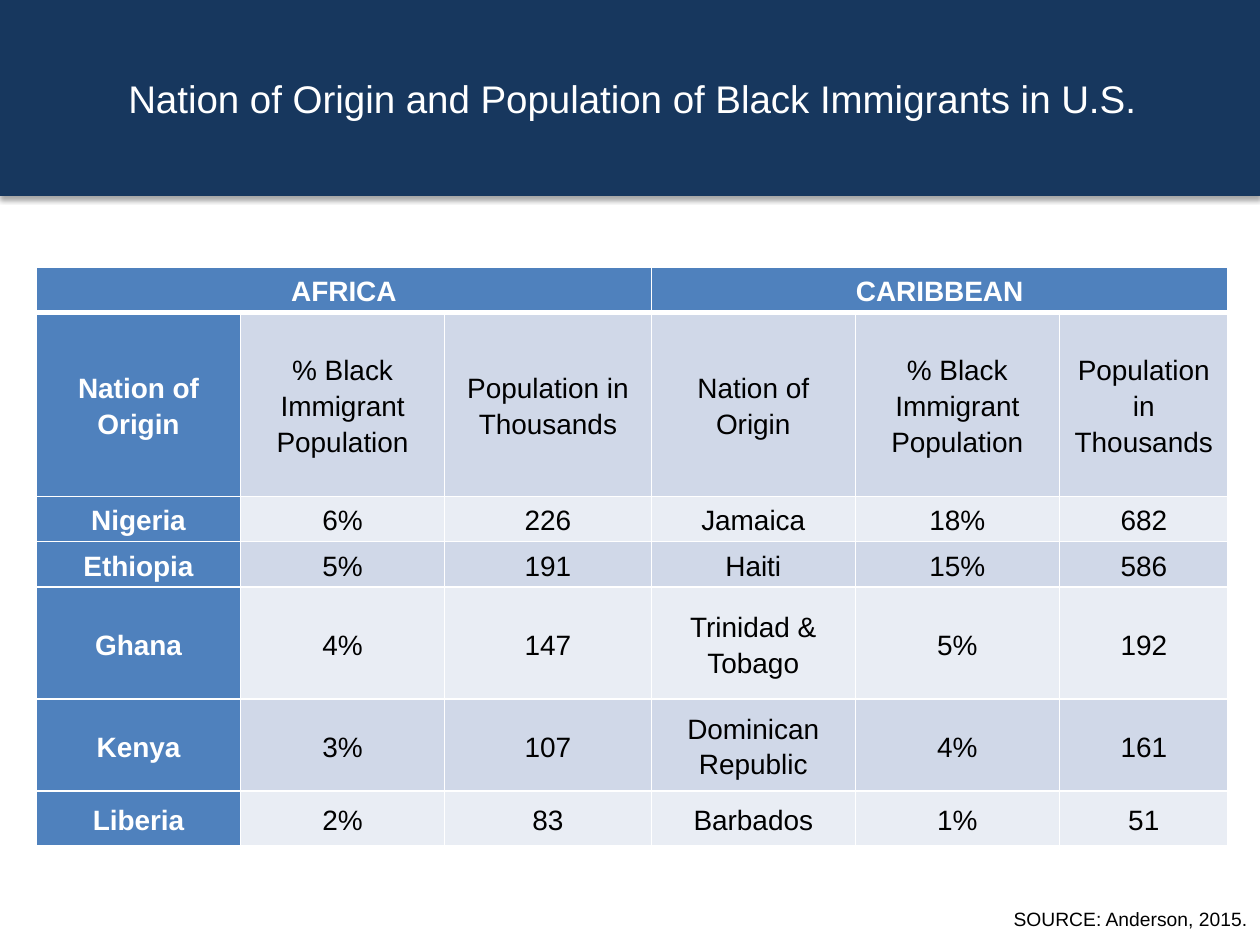
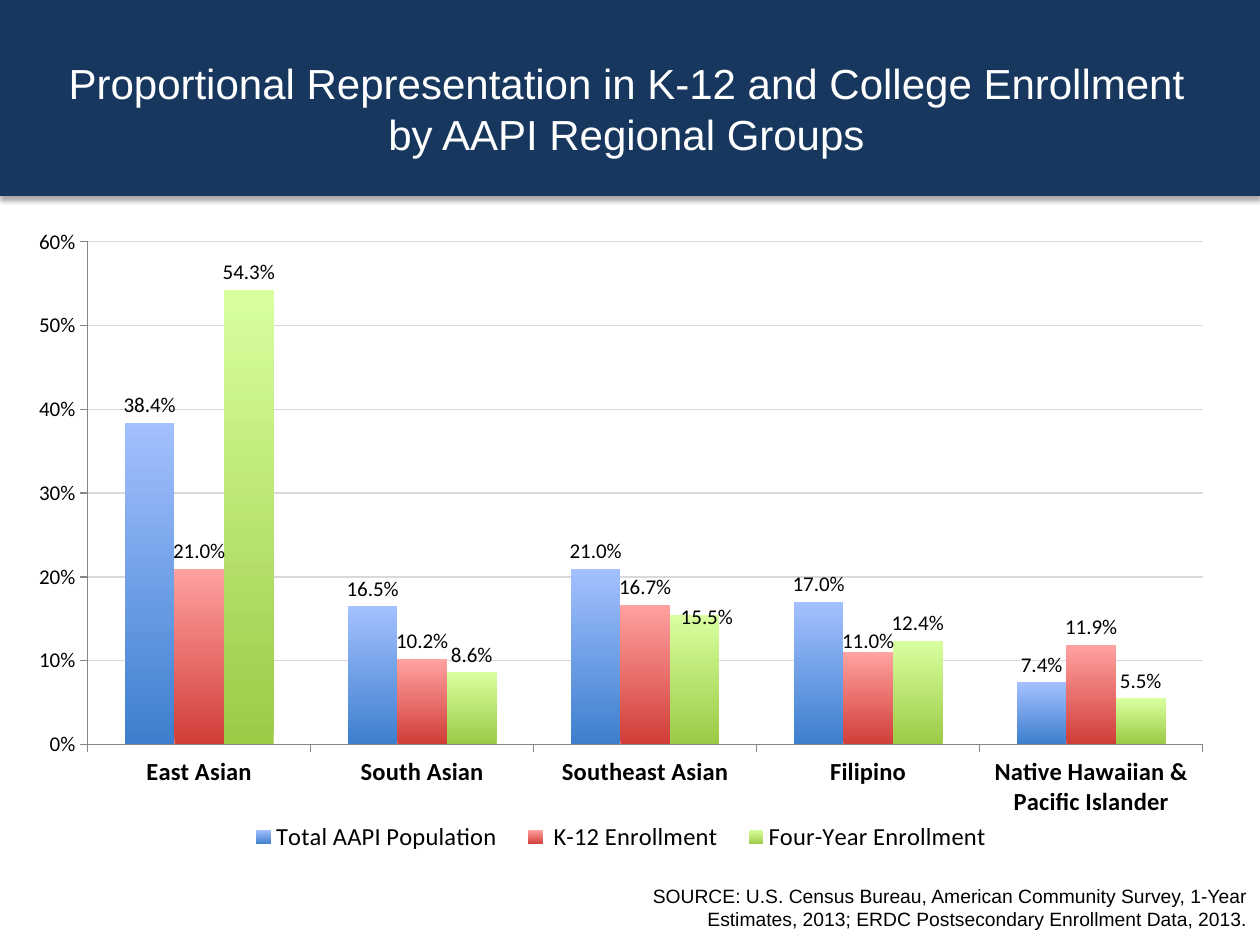
from lxml.etree import SubElement
from pptx import Presentation
from pptx.chart.data import CategoryChartData
from pptx.dml.color import RGBColor
from pptx.enum.chart import XL_CHART_TYPE, XL_LABEL_POSITION, XL_LEGEND_POSITION, XL_TICK_MARK
from pptx.enum.shapes import MSO_SHAPE
from pptx.enum.text import MSO_ANCHOR, PP_ALIGN
from pptx.oxml import parse_xml
from pptx.oxml.ns import nsdecls, qn
from pptx.util import Pt

NAVY = RGBColor(0x17, 0x37, 0x5E)
BLUE = RGBColor(0x4F, 0x81, 0xBD)
BAND_DARK = RGBColor(0xD0, 0xD8, 0xE8)
BAND_LIGHT = RGBColor(0xE9, 0xED, 0xF4)
WHITE = RGBColor(0xFF, 0xFF, 0xFF)
BLACK = RGBColor(0, 0, 0)
GRID_GREY = RGBColor(0xD9, 0xD9, 0xD9)
AXIS_GREY = RGBColor(0x86, 0x86, 0x86)
BAR_GRADIENTS = [
    (RGBColor(0x3D, 0x7F, 0xCD), RGBColor(0xA3, 0xC0, 0xFF)),
    (RGBColor(0xD1, 0x3D, 0x38), RGBColor(0xFF, 0xA2, 0xA0)),
    (RGBColor(0x9C, 0xCA, 0x45), RGBColor(0xD9, 0xFF, 0x9F)),
]

COLUMN_WIDTHS = [116.6, 116.6, 118.1, 116.6, 116.6, 96.5]
ROW_HEIGHTS = [26, 105, 26, 26, 64, 52.5, 31]
REGION_HEADINGS = ["Nation of Origin", "% Black Immigrant Population", "Population in Thousands"]
NATIONS = [
    ["AFRICA", "", "", "CARIBBEAN", "", ""],
    REGION_HEADINGS * 2,
    ["Nigeria", "6%", "226", "Jamaica", "18%", "682"],
    ["Ethiopia", "5%", "191", "Haiti", "15%", "586"],
    ["Ghana", "4%", "147", "Trinidad & Tobago", "5%", "192"],
    ["Kenya", "3%", "107", "Dominican Republic", "4%", "161"],
    ["Liberia", "2%", "83", "Barbados", "1%", "51"],
]

GROUPS = ["East Asian", "South Asian", "Southeast Asian", "Filipino",
          "Native Hawaiian & Pacific Islander"]
ENROLLMENT = {
    "Total AAPI Population": (0.384, 0.165, 0.21, 0.17, 0.074),
    " K-12 Enrollment": (0.21, 0.102, 0.167, 0.11, 0.119),
    "Four-Year Enrollment": (0.543, 0.086, 0.155, 0.124, 0.055),
}
MOVED_LABELS = [(1, 3, 0, 0.01), (2, 2, 0.01, 0.03)]


def apply(target, formats):
    """Set each named attribute of the target."""
    for name, value in formats.items():
        setattr(target, name, value)


def style_font(font, size, name="Arial", color=BLACK, bold=False):
    """Set size, typeface, weight and colour of a font."""
    apply(font, {"size": Pt(size), "name": name, "bold": bold})
    font.color.rgb = color


def style_line(line, color, width=0.75):
    """Give a line a solid colour and a width."""
    line.color.rgb = color
    line.width = Pt(width)


def add_band(page):
    """Draw the shadowed band behind the title."""
    band = page.shapes.add_shape(MSO_SHAPE.RECTANGLE, 0, 0, Pt(720), Pt(111.6))
    band.fill.solid()
    band.fill.fore_color.rgb = NAVY
    style_line(band.line, NAVY)
    band.shadow.inherit = False
    effects = band._element.spPr.find(qn("a:effectLst"))
    effects.append(parse_xml(
        f'<a:outerShdw {nsdecls("a")} blurRad="{Pt(3.1)}" dist="{Pt(1.8)}" dir="5400000" '
        'rotWithShape="0"><a:srgbClr val="000000"><a:alpha val="35000"/></a:srgbClr>'
        '</a:outerShdw>'))


def add_text(page, bounds, lines, align, size, color):
    """Add a wrapping text box with one paragraph per line."""
    box = page.shapes.add_textbox(*map(Pt, bounds))
    frame = box.text_frame
    frame.word_wrap = True
    frame.text = "\n".join(lines)
    for para in frame.paragraphs:
        para.alignment = align
        style_font(para.runs[0].font, size, color=color)


def add_page(deck, title, title_top, title_size, source, source_top):
    """Add a blank page with the shared band, title and source note."""
    page = deck.slides.add_slide(deck.slide_layouts[6])
    add_band(page)
    title_height = 7.2 + len(title) * title_size * 1.2
    add_text(page, (20.9, title_top, 681, title_height), title,
             PP_ALIGN.CENTER, title_size, WHITE)
    add_text(page, (335.5, source_top, 384.5, 34), [source], PP_ALIGN.RIGHT, 11, BLACK)
    return page


def set_borders(cell, bottom):
    """Draw white borders round a cell, the lowest with its own width."""
    properties = cell._tc.get_or_add_tcPr()
    for side, width in {"L": 1, "R": 1, "T": 1, "B": bottom}.items():
        border = SubElement(properties, qn(f"a:ln{side}"), w=str(Pt(width)))
        fill = SubElement(border, qn("a:solidFill"))
        SubElement(fill, qn("a:srgbClr"), val=str(WHITE))


def fill_cell(cell, text, row, column):
    """Write and format one table cell by its place in the grid."""
    is_heading = row == 0 or column == 0
    set_borders(cell, 3 if row == 0 else 1)
    cell.fill.solid()
    cell.fill.fore_color.rgb = BLUE if is_heading else (BAND_LIGHT, BAND_DARK)[row % 2]
    apply(cell, {"vertical_anchor": MSO_ANCHOR.MIDDLE, "margin_left": Pt(5),
                 "margin_right": Pt(5), "margin_top": 0, "margin_bottom": 0})
    if text:
        cell.text = text
        para = cell.text_frame.paragraphs[0]
        apply(para, {"alignment": PP_ALIGN.CENTER, "line_spacing": 1.15, "space_after": Pt(10)})
        style_font(para.runs[0].font, 16, color=WHITE if is_heading else BLACK, bold=is_heading)


def add_nation_table(page):
    """Add the table of nations of origin in two regions."""
    table = page.shapes.add_table(
        len(NATIONS), len(COLUMN_WIDTHS), Pt(20.9), Pt(152.6),
        Pt(sum(COLUMN_WIDTHS)), Pt(sum(ROW_HEIGHTS))).table
    for column, width in zip(table.columns, COLUMN_WIDTHS):
        column.width = Pt(width)
    for row, height in zip(table.rows, ROW_HEIGHTS):
        row.height = Pt(height)
    for first in (0, 3):
        table.cell(0, first).merge(table.cell(0, first + 2))
    for row, texts in enumerate(NATIONS):
        for column, text in enumerate(texts):
            fill_cell(table.cell(row, column), text, row, column)


def place(parent, index, target=None, **fractions):
    """Give a chart part a manual layout in fractions of the chart."""
    for old in parent.findall(qn("c:layout")):
        parent.remove(old)
    layout = parse_xml(f'<c:layout {nsdecls("c")}><c:manualLayout/></c:layout>')
    settings = {"layoutTarget": target} if target else {}
    if "w" in fractions:
        settings.update(xMode="edge", yMode="edge")
    for name, value in {**settings, **fractions}.items():
        SubElement(layout[0], qn(f"c:{name}"), val=str(value))
    parent.insert(index, layout)


def style_axes(chart):
    """Format both axes and the gridlines."""
    values, categories = chart.value_axis, chart.category_axis
    apply(values, {"minimum_scale": 0, "maximum_scale": 0.6, "major_unit": 0.1,
                   "has_major_gridlines": True})
    apply(values.tick_labels, {"number_format": "0%", "number_format_is_linked": False})
    style_line(values.major_gridlines.format.line, GRID_GREY)
    for axis, size, bold in ((values, 12, False), (categories, 14, True)):
        axis.major_tick_mark = XL_TICK_MARK.OUTSIDE
        style_line(axis.format.line, AXIS_GREY)
        style_font(axis.tick_labels.font, size, "Calibri", bold=bold)


def style_series(series, gradient):
    """Give a series its upward gradient and percent labels."""
    series.format.fill.gradient()
    series.format.fill.gradient_angle = 90
    for stop, color in zip(series.format.fill.gradient_stops, gradient):
        stop.color.rgb = color
    series.format.line.fill.background()
    labels = series.data_labels
    apply(labels, {"show_value": True, "number_format": "0.0%",
                   "number_format_is_linked": False,
                   "position": XL_LABEL_POSITION.OUTSIDE_END})
    style_font(labels.font, 12, "Calibri")


def move_label(series, point, x, y):
    """Shift one data label from its usual place."""
    label = series.points[point].data_label
    label.position = XL_LABEL_POSITION.OUTSIDE_END
    style_font(label.font, 12, "Calibri")
    element = series.data_labels._element.xpath(f'c:dLbl[c:idx/@val="{point}"]')[0]
    place(element, 1, x=x, y=y)
    element.insert(2, parse_xml(
        f'<c:numFmt {nsdecls("c")} formatCode="0.0%" sourceLinked="0"/>'))


def add_enrollment_chart(page):
    """Add the clustered columns of population and enrollment shares."""
    data = CategoryChartData(number_format="0.0%")
    data.categories = GROUPS
    for name, shares in ENROLLMENT.items():
        data.add_series(name, shares)
    chart = page.shapes.add_chart(XL_CHART_TYPE.COLUMN_CLUSTERED, Pt(8.6), Pt(123.1),
                                  Pt(692.6), Pt(378), data).chart
    apply(chart, {"has_title": False, "has_legend": True})
    style_font(chart.font, 10, "Calibri")
    apply(chart.legend, {"position": XL_LEGEND_POSITION.BOTTOM, "include_in_layout": False})
    style_font(chart.legend.font, 14, "Calibri")
    plot = chart.plots[0]
    apply(plot, {"gap_width": 150, "overlap": 0, "vary_by_categories": False})
    style_axes(chart)
    for series, gradient in zip(plot.series, BAR_GRADIENTS):
        style_series(series, gradient)
    for series, point, x, y in MOVED_LABELS:
        move_label(plot.series[series], point, x, y)
    place(chart._chartSpace.chart.plotArea, 0, "inner", x=0.06, y=0.04, w=0.92, h=0.76)
    place(chart.legend._element, 1, x=0.18, y=0.91, w=0.64, h=0.06)


def main():
    """Build the two pages and save the deck."""
    deck = Presentation()
    apply(deck, {"slide_width": Pt(720), "slide_height": Pt(540)})
    nations = add_page(
        deck, ["Nation of Origin and Population of Black Immigrants in U.S."], 39.6, 22,
        "SOURCE: Anderson, 2015.", 514.8)
    add_nation_table(nations)
    enrollment = add_page(
        deck, ["Proportional Representation in K-12 and College Enrollment ",
               "by AAPI Regional Groups "], 29.5, 24,
        "SOURCE: U.S. Census Bureau, American Community Survey, 1-Year Estimates, 2013; "
        "ERDC Postsecondary Enrollment Data, 2013.", 501.8)
    add_enrollment_chart(enrollment)
    deck.save("out.pptx")


if __name__ == "__main__":
    main()
